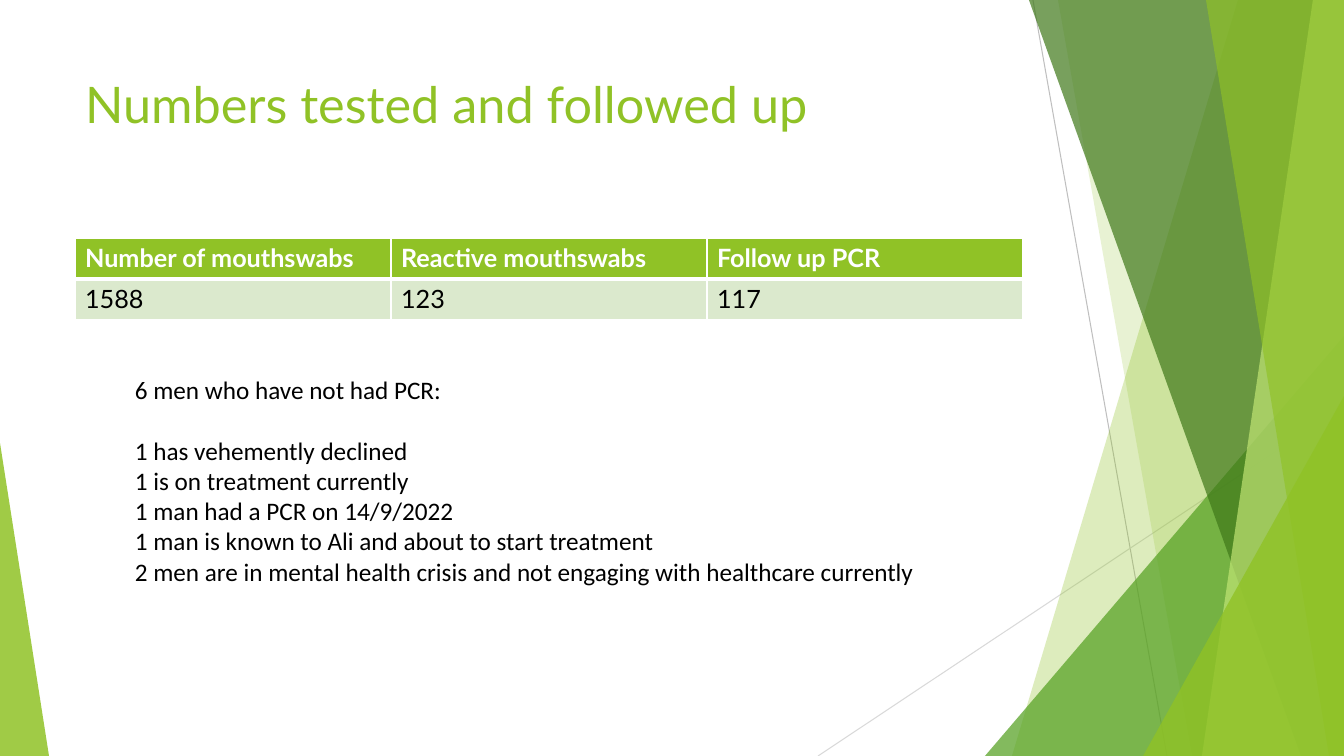
import pptx
import pptx.util
import pptx.dml.color
import pptx.enum.shapes
import pptx.enum.text
import pptx.oxml.ns
from lxml import etree

TITLE = "Numbers tested and followed up"
RESULTS = [
    ("Number of mouthswabs", "Reactive mouthswabs", "Follow up PCR"),
    ("1588", "123", "117"),
]
NO_PCR_HEADING = "6 men who have not had PCR:"
NO_PCR_REASONS = [
    "1 has vehemently declined",
    "1 is on treatment currently",
    "1 man had a PCR on 14/9/2022",
    "1 man is known to Ali and about to start treatment",
    "2 men are in mental health crisis and not engaging with healthcare currently",
]
COLORS = {
    "lime": "90C226", "green": "54A021", "forest": "3F7819", "pale": "C0E474",
    "row": "DBE9CD", "white": "FFFFFF", "black": "000000",
    "steep line": "BFBFBF", "shallow line": "D9D9D9",
}
WIDTH, HEIGHT = 1344, 756
HAIRLINES = [  # colour, start, end
    ("steep line", (1033, 0), (1167, HEIGHT)),
    ("shallow line", (WIDTH, 406), (818, HEIGHT)),
]
# Bands reach the right edge: x at the top, x at the bottom.
# Wedges stand on the bottom edge: left, top, width, apex position.
FACETS = [  # kind, colour, opacity in percent, geometry
    ("band", "lime", 30, (1238, 1012)),
    ("band", "lime", 20, (1058, 1192)),
    ("wedge", "green", 72, (985, 336, 359, 1)),
    ("band", "forest", 70, (1029, 1301)),
    ("band", "pale", 70, (1313, 1202)),
    ("band", "lime", 65, (1206, 1329)),
    ("wedge", "lime", 80, (1143, 396, 201, 1)),
    ("wedge", "lime", 85, (0, 443, 49, 0)),
]
EMU_PER_PX = 914400 / 100.8
Pt = pptx.util.Pt
qn = pptx.oxml.ns.qn


def px(*lengths):
    return [pptx.util.Emu(round(n * EMU_PER_PX)) for n in lengths]


def rgb(name):
    return pptx.dml.color.RGBColor.from_string(COLORS[name])


def write(paragraph, text, font, size, color, bold=False):
    run = paragraph.add_run()
    run.text = text
    run.font.name, run.font.size, run.font.bold = font, Pt(size), bold
    run.font.color.rgb = rgb(color)


def add_hairline(shapes, color, start, end):
    line = shapes.add_connector(
        pptx.enum.shapes.MSO_CONNECTOR.STRAIGHT, *px(*start, *end))
    line.line.color.rgb = rgb(color)
    line.line.width = Pt(0.75)
    etree.SubElement(line._element.spPr, qn("a:effectLst"))


def add_facet(shapes, kind, color, opacity, geometry):
    if kind == "band":
        top_x, bottom_x = geometry
        outline = shapes.build_freeform(top_x, 0, scale=EMU_PER_PX)
        outline.add_line_segments(
            [(WIDTH, 0), (WIDTH, HEIGHT), (bottom_x, HEIGHT)], close=True)
        facet = outline.convert_to_shape()
    else:
        left, top, width, apex = geometry
        facet = shapes.add_shape(
            pptx.enum.shapes.MSO_SHAPE.ISOSCELES_TRIANGLE,
            *px(left, top, width, HEIGHT - top))
        facet.adjustments[0] = apex
    facet.shadow.inherit = False
    facet.line.fill.background()
    facet.fill.solid()
    facet.fill.fore_color.rgb = rgb(color)
    tint = facet._element.spPr.find(qn("a:solidFill"))[0]
    etree.SubElement(tint, qn("a:alpha"), val=str(opacity * 1000))


def add_border(cell, side, points):
    edge = etree.SubElement(
        cell._tc.get_or_add_tcPr(), qn("a:ln" + side), w=str(Pt(points)))
    fill = etree.SubElement(edge, qn("a:solidFill"))
    etree.SubElement(fill, qn("a:srgbClr"), val=COLORS["white"])


def add_results(shapes):
    row_height, column_width = 41, 316
    rows, columns = len(RESULTS), len(RESULTS[0])
    table = shapes.add_table(rows, columns, *px(
        75, 238, columns * column_width, rows * row_height)).table
    for r, values in enumerate(RESULTS):
        header = r == 0
        table.rows[r].height = px(row_height)[0]
        for c, value in enumerate(values):
            table.columns[c].width = px(column_width)[0]
            cell = table.cell(r, c)
            for side in "LRTB":
                shared = (side == "B") if header else (side == "T")
                add_border(cell, side, 3 if shared else 1)
            cell.fill.solid()
            cell.fill.fore_color.rgb = rgb("lime" if header else "row")
            write(cell.text_frame.paragraphs[0], value, "Lato", 18,
                  "white" if header else "black", bold=header)


def add_no_pcr(shapes):
    frame = shapes.add_textbox(*px(125, 338, 846, 254)).text_frame
    frame.word_wrap = True
    frame.margin_top = px(36)[0]
    write(frame.paragraphs[0], NO_PCR_HEADING, "Calibri", 18, "black")
    frame.paragraphs[0].space_after = Pt(22)
    for reason in NO_PCR_REASONS:
        write(frame.add_paragraph(), reason, "Calibri", 18, "black")


def main():
    deck = pptx.Presentation()
    deck.slide_width, deck.slide_height = px(WIDTH, HEIGHT)
    slide = deck.slides.add_slide(deck.slide_layouts[5])
    shapes = slide.shapes
    for hairline in HAIRLINES:
        add_hairline(shapes, *hairline)
    for facet in FACETS:
        add_facet(shapes, *facet)

    title = shapes.title
    title.left, title.top, title.width, title.height = px(75, 68, 948, 145)
    title.text_frame.vertical_anchor = pptx.enum.text.MSO_ANCHOR.TOP
    heading = title.text_frame.paragraphs[0]
    heading.alignment = pptx.enum.text.PP_ALIGN.LEFT
    write(heading, TITLE, "Lato", 36, "lime")

    add_results(shapes)
    add_no_pcr(shapes)
    deck.save("out.pptx")


if __name__ == "__main__":
    main()
